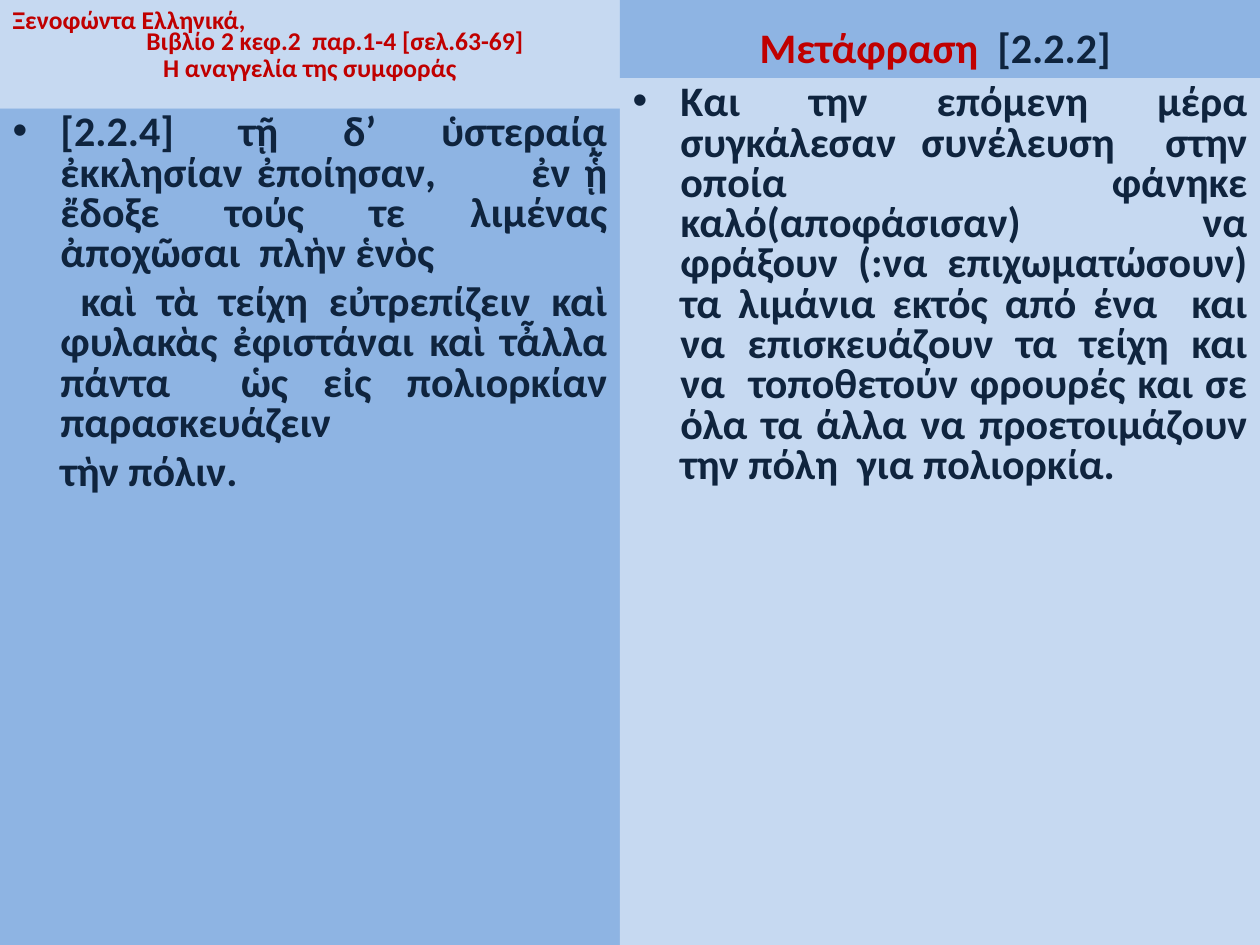
"""Build a two-column slide with an ancient Greek passage and its translation."""
import pptx
import pptx.util
import pptx.dml.color
import pptx.enum.text
import pptx.oxml.ns
import lxml.etree

HUES = {"pale": "C6D9F1", "blue": "8EB4E3", "red": "C00000", "navy": "0F243E"}
WIDE, HIGH = 10, 7.5
SPLIT = 4.92
HANG, TAB = 0.38, 4.08
ALIGN = pptx.enum.text.PP_ALIGN
ANCHOR = pptx.enum.text.MSO_ANCHOR

SOURCE = [
    ([("Ξενοφώντα Ελληνικά,", "red")], {"align": ALIGN.LEFT}),
    ([("Βιβλίο 2 κεφ.2  παρ.1-4 [σελ.63-69]", "red")], {"left": 0.4}),
    ([("Η αναγγελία της συμφοράς", "red")], {"before": 2.9}),
]
PASSAGE = [
    ([("[2.2.4] τῇ δ’ ὑστεραίᾳ ἐκκλησίαν ἐποίησαν,\tἐν ᾗ ἔδοξε τούς τε λιμένας "
       "ἀποχῶσαι  πλὴν ἑνὸς", "navy")], {"first": -HANG, "bullet": "•", "tab": TAB}),
    ([("καὶ τὰ τείχη εὐτρεπίζειν καὶ φυλακὰς ἐφιστάναι καὶ τἆλλα πάντα  ὡς εἰς "
       "πολιορκίαν παρασκευάζειν", "navy")], {"first": 0.16, "before": 4.8}),
    ([("τὴν πόλιν.", "navy")], {"before": 4.8}),
]
HEADING = [([("Μετάφραση ", "red"), (" [2.2.2] ", "navy")], {})]
MEANING = [
    ([("Και την επόμενη μέρα συγκάλεσαν συνέλευση  στην οποία φάνηκε "
       "καλό(αποφάσισαν)  να φράξουν (:να επιχωματώσουν) τα λιμάνια εκτός από ένα  "
       "και να επισκευάζουν τα τείχη και να  τοποθετούν φρουρές και σε όλα τα άλλα "
       "να προετοιμάζουν την πόλη  για πολιορκία.", "navy")],
     {"first": -HANG, "bullet": "•"}),
]
HEAD = {"align": ALIGN.CENTER}
BODY = {"align": ALIGN.JUSTIFY, "left": HANG, "lines": 0.8}
COLUMNS = [
    (0, SPLIT, 0.86, ("pale", SOURCE, {**HEAD, "size": 14.6, "lines": 0.7}, 0.21),
     ("blue", PASSAGE, BODY)),
    (SPLIT, WIDE - SPLIT, 0.62, ("blue", HEADING, HEAD, 0.05),
     ("pale", MEANING, BODY)),
]


def tint(hue):
    return pptx.dml.color.RGBColor.from_string(HUES[hue])


def write(para, runs, size=24, align=None, left=0, first=0, lines=1, before=0,
          bullet=None, tab=None):
    props = para._p.get_or_add_pPr()
    props.set("marL", str(pptx.util.Inches(left)))
    props.set("indent", str(pptx.util.Inches(first)))
    name = pptx.oxml.ns.qn
    if bullet:
        lxml.etree.SubElement(props, name("a:buFont"), typeface="Arial")
        lxml.etree.SubElement(props, name("a:buChar"), char=bullet)
    else:
        lxml.etree.SubElement(props, name("a:buNone"))
    if tab:
        stops = lxml.etree.SubElement(props, name("a:tabLst"))
        lxml.etree.SubElement(stops, name("a:tab"),
                              pos=str(pptx.util.Inches(tab)), algn="l")
    para.alignment = align
    para.line_spacing = lines
    para.space_before = pptx.util.Pt(before)
    for text, hue in runs:
        run = para.add_run()
        run.text = text
        run.font.name = "Calibri"
        run.font.size = pptx.util.Pt(size)
        run.font.bold = True
        run.font.color.rgb = tint(hue)


def fill(box, area, hue, paras, style, anchor, foot=0.05):
    box.left, box.top, box.width, box.height = map(pptx.util.Inches, area)
    box.fill.solid()
    box.fill.fore_color.rgb = tint(hue)
    frame = box.text_frame
    frame.word_wrap = True
    frame.auto_size = pptx.enum.text.MSO_AUTO_SIZE.NONE
    frame.vertical_anchor = anchor
    frame.margin_bottom = pptx.util.Inches(foot)
    for spot, (runs, extra) in enumerate(paras):
        para = frame.add_paragraph() if spot else frame.paragraphs[0]
        write(para, runs, **{**style, **extra})


def main():
    deck = pptx.Presentation()
    deck.slide_width = pptx.util.Inches(WIDE)
    deck.slide_height = pptx.util.Inches(HIGH)
    slide = deck.slides.add_slide(deck.slide_layouts[4])
    title, *boxes = slide.placeholders
    title.element.getparent().remove(title.element)
    for (left, wide, cut, head, body), top, low in zip(COLUMNS, boxes[::2], boxes[1::2]):
        hue, paras, style, foot = head
        fill(top, (left, 0, wide, cut), hue, paras, style, ANCHOR.BOTTOM, foot)
        fill(low, (left, cut, wide, HIGH - cut), *body, ANCHOR.TOP)
    deck.save("out.pptx")


if __name__ == "__main__":
    main()
